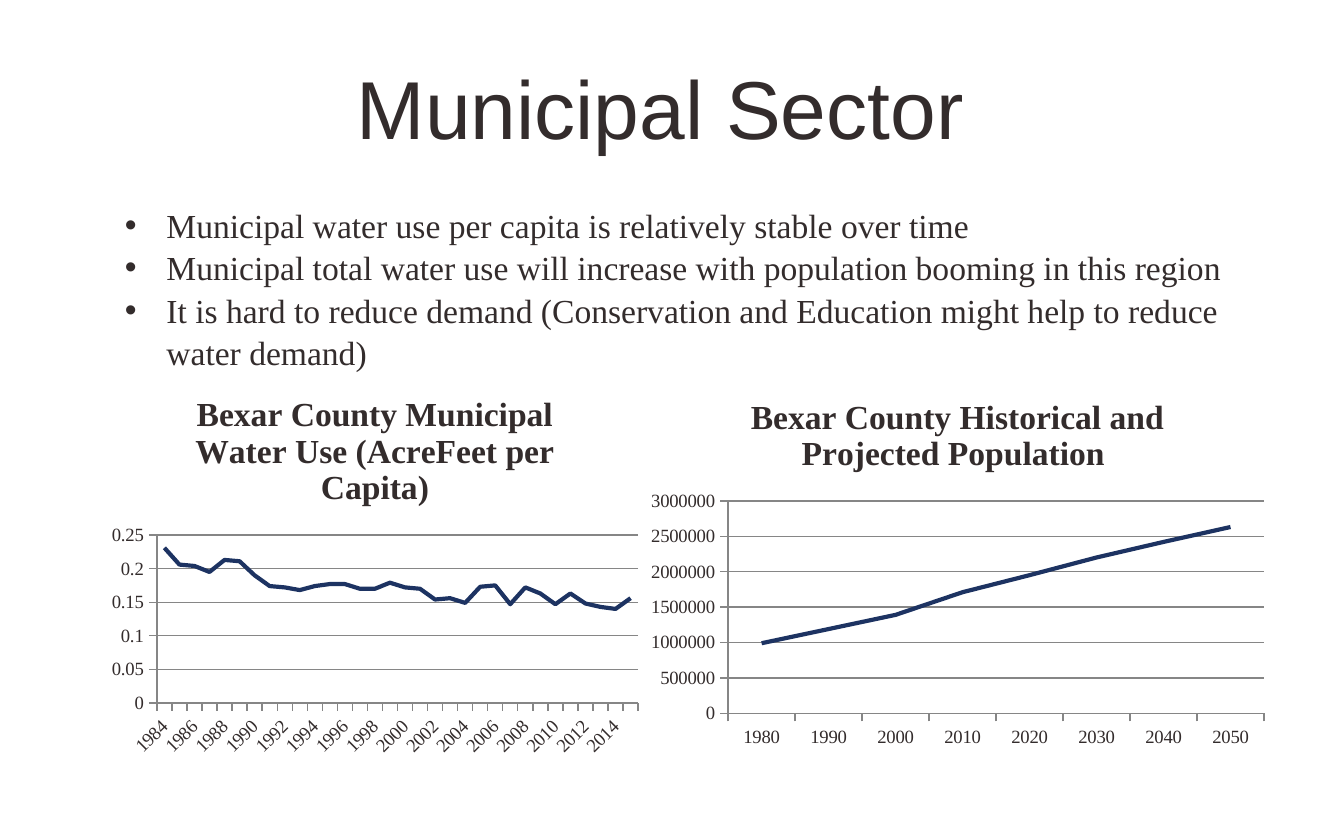
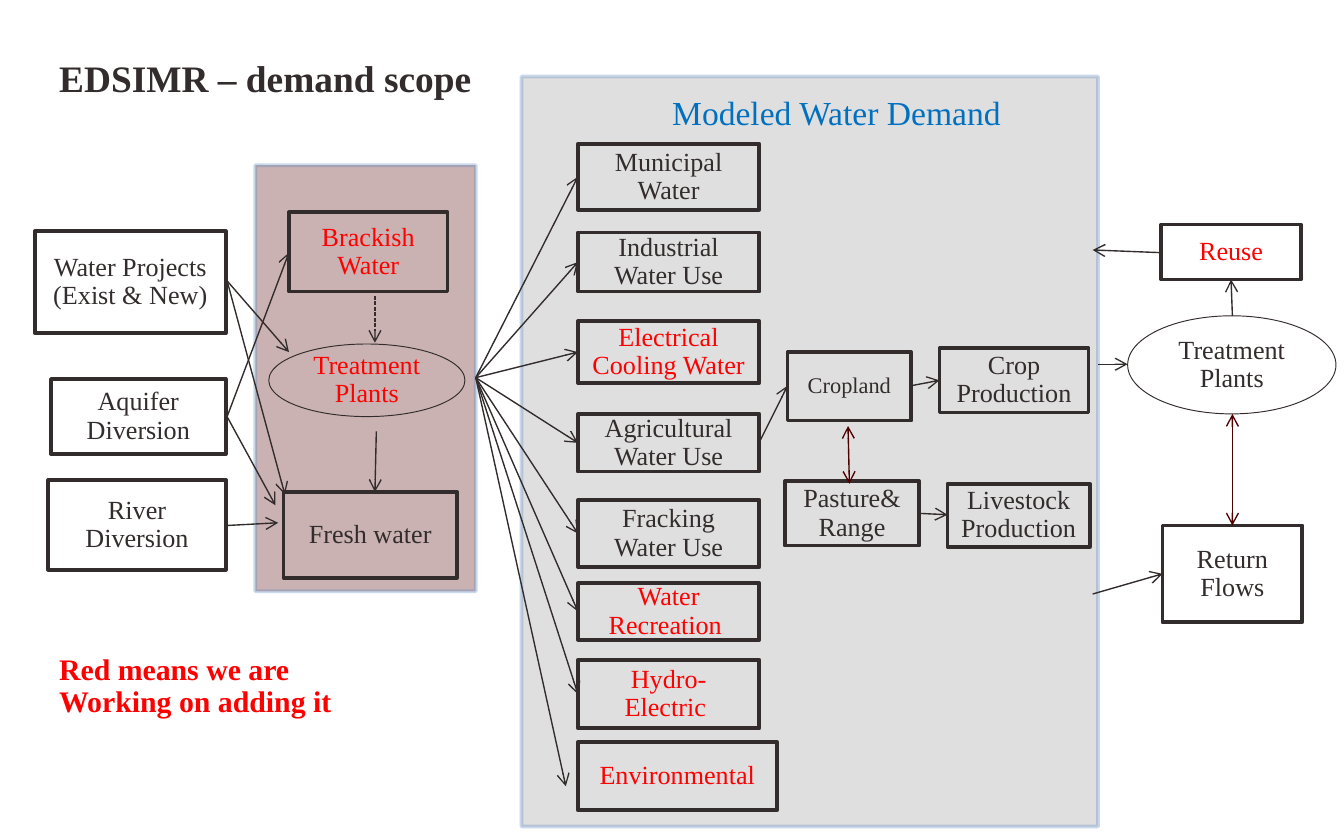
from lxml.etree import SubElement
from pptx import Presentation
from pptx.chart.data import CategoryChartData
from pptx.dml.color import RGBColor
from pptx.enum.chart import XL_CHART_TYPE, XL_TICK_MARK
from pptx.enum.dml import MSO_LINE
from pptx.enum.shapes import MSO_CONNECTOR, MSO_SHAPE
from pptx.enum.text import MSO_ANCHOR, PP_ALIGN
from pptx.oxml.ns import qn
from pptx.util import Inches, Pt

COLORS = {
    "text": "332C2C",
    "planned": "FF0000",
    "heading": "0070C0",
    "series": "1D3362",
    "axis": "868686",
    "demand": "9B9696",
    "supply": "500000",
    "band_line": "4F81BD",
    "exchange": "4E0000",
}
SANS, SERIF = "Arial", "Times New Roman"

WATER_USE = [0.231, 0.206, 0.204, 0.195, 0.213, 0.211, 0.19, 0.174,
             0.172, 0.168, 0.174, 0.177, 0.177, 0.17, 0.17, 0.179,
             0.172, 0.17, 0.154, 0.156, 0.149, 0.173, 0.175, 0.147,
             0.172, 0.163, 0.147, 0.163, 0.148, 0.143, 0.14, 0.156]
POPULATION = [990000, 1190000, 1390000, 1710000,
              1950000, 2200000, 2420000, 2630000]

# Demand boxes share a left edge: text, top, height, colour
DEMAND_LEFT, DEMAND_WIDTH = 4.3, 1.35
DEMANDS = [
    ("Municipal Water", 1.07, 0.49, "text"),
    ("Industrial Water Use", 1.73, 0.44, "text"),
    ("Electrical Cooling Water", 2.39, 0.46, "planned"),
    ("Agricultural Water Use", 3.08, 0.43, "text"),
    ("Fracking Water Use", 3.72, 0.5, "text"),
    ("Water Recreation ", 4.34, 0.42, "planned"),
    ("Hydro-Electric ", 4.91, 0.51, "planned"),
]
BOXES = [
    ("Environmental", (DEMAND_LEFT, 5.52, 1.48, 0.51), "planned"),
    ("Pasture&\nRange", (5.84, 3.58, 1, 0.48), "text"),
    ("Crop Production", (6.99, 2.59, 1.11, 0.48), "text"),
    ("Livestock Production", (7.05, 3.6, 1.06, 0.47), "text"),
    ("Fresh water", (2.11, 3.66, 1.29, 0.64), "text"),
    ("Brackish Water", (2.15, 1.58, 1.18, 0.59), "planned"),
    ("Aquifer Diversion", (0.38, 2.82, 1.3, 0.56), "text"),
    ("River Diversion", (0.36, 3.57, 1.32, 0.67), "text"),
    ("Water Projects (Exist & New)", (0.26, 1.72, 1.42, 0.76), "text"),
    ("Reuse", (8.64, 1.67, 1.04, 0.41), "planned"),
    ("Return Flows", (8.65, 3.91, 1.04, 0.72), "text"),
]
PLANTS = [
    ((2, 2.56, 1.46, 0.54), "planned"),
    ((8.39, 2.35, 1.55, 0.73), "text"),
]
SUPPLY_OUT = (3.54, 2.81)
PROJECTS_OUT, AQUIFER_OUT = (1.69, 2.09), (1.69, 3.1)
FLOWS = [
    (PROJECTS_OUT, (2.15, 2.62)),
    (PROJECTS_OUT, (2.12, 3.68)),
    (AQUIFER_OUT, (2.15, 1.88)),
    (AQUIFER_OUT, (2.05, 3.76)),
    ((1.69, 3.91), (2.07, 3.89)),
    ((2.8, 3.21), (2.79, 3.66)),
    (SUPPLY_OUT, (4.21, 5.85)),
    ((5.65, 3.29), (5.86, 2.87)),
    ((6.78, 2.87), (6.99, 2.83)),
    ((6.84, 3.82), (7.05, 3.83)),
    ((8.17, 2.71), (8.39, 2.71)),
    ((8.64, 1.88), (8.13, 1.86)),
    ((8.13, 4.42), (8.65, 4.27)),
    ((9.17, 2.35), (9.16, 2.08)),
]
EXCHANGES = [((6.31, 3.17), (6.32, 3.6)), ((9.17, 3.08), (9.17, 3.91))]


def rgb(name):
    return RGBColor.from_string(COLORS[name])


def inches(values):
    return [Inches(v) for v in values]


def set_font(font, size, color="text", name=SERIF, bold=False):
    font.size, font.name, font.bold = Pt(size), name, bold
    font.color.rgb = rgb(color)


def set_line(line, color, width):
    line.color.rgb = rgb(color)
    line.width = Pt(width)


def set_alpha(color_parent, percent):
    """Make the solid fill inside a fill or line element translucent."""
    clr = color_parent.find(qn("a:solidFill"))[0]
    SubElement(clr, qn("a:alpha"), val=str(percent * 1000))


def add_bullet(p):
    pPr = p._p.get_or_add_pPr()
    indent = Inches(0.31)
    pPr.set("marL", str(indent))
    pPr.set("indent", str(-indent))
    SubElement(pPr, qn("a:buFont"), typeface=SANS)
    SubElement(pPr, qn("a:buChar"), char="•")


def fill_text(tf, text, size, color="text", name=SERIF, bold=False,
              align=PP_ALIGN.LEFT, spacing=1.0, bullets=False):
    """Write one paragraph for each line of text."""
    for i, line in enumerate(text.split("\n")):
        p = tf.paragraphs[0] if i == 0 else tf.add_paragraph()
        p.alignment, p.line_spacing = align, spacing
        if bullets:
            add_bullet(p)
        r = p.add_run()
        r.text = line
        set_font(r.font, size, color, name, bold)


def add_text(s, box, text, size, anchor=MSO_ANCHOR.TOP, wrap=True,
             margins=(0.1, 0.05), **style):
    tf = s.shapes.add_textbox(*inches(box)).text_frame
    tf.word_wrap, tf.vertical_anchor = wrap, anchor
    tf.margin_left = tf.margin_right = Inches(margins[0])
    tf.margin_top = tf.margin_bottom = Inches(margins[1])
    fill_text(tf, text, size, **style)


def add_node(s, box, text, color="text", size=14,
             kind=MSO_SHAPE.RECTANGLE, width=2):
    sp = s.shapes.add_shape(kind, *inches(box))
    sp.shadow.inherit = False
    sp.fill.background()
    set_line(sp.line, "text", width)
    tf = sp.text_frame
    tf.word_wrap, tf.vertical_anchor = True, MSO_ANCHOR.MIDDLE
    fill_text(tf, text, size, color, align=PP_ALIGN.CENTER, spacing=0.9)


def add_band(s, box, color):
    sp = s.shapes.add_shape(MSO_SHAPE.RECTANGLE, *inches(box))
    sp.shadow.inherit = False
    sp.fill.solid()
    sp.fill.fore_color.rgb = rgb(color)
    set_line(sp.line, "band_line", 2)
    spPr = sp._element.spPr
    set_alpha(spPr, 30)
    set_alpha(spPr.find(qn("a:ln")), 30)


def add_arrow(s, start, end, color="text", both=False, dashed=False):
    cx = s.shapes.add_connector(MSO_CONNECTOR.STRAIGHT, *inches(start + end))
    set_line(cx.line, color, 0.75)
    if dashed:
        cx.line.dash_style = MSO_LINE.SQUARE_DOT
    spPr = cx._element.spPr
    ln = spPr.find(qn("a:ln"))
    for tag in ["a:headEnd", "a:tailEnd"] if both else ["a:tailEnd"]:
        SubElement(ln, qn(tag), type="arrow")
    SubElement(spPr, qn("a:effectLst"))


def add_line_chart(s, box, title, years, values, slanted=False):
    data = CategoryChartData()
    data.categories = [str(y) for y in years]
    data.add_series("Series 1", values)
    chart = s.shapes.add_chart(XL_CHART_TYPE.LINE, *inches(box), data).chart
    set_font(chart.font, 10)
    chart.has_legend = False
    chart.has_title = True
    fill_text(chart.chart_title.text_frame, title, 18, bold=True,
              align=PP_ALIGN.CENTER)
    chart.plots[0].vary_by_categories = False
    series = chart.plots[0].series[0]
    series.smooth = False
    set_line(series.format.line, "series", 2.25)
    for axis in (chart.category_axis, chart.value_axis):
        axis.major_tick_mark = XL_TICK_MARK.OUTSIDE
        set_line(axis.format.line, "axis", 0.75)
        set_font(axis.tick_labels.font, 10)
    chart.value_axis.has_major_gridlines = True
    set_line(chart.value_axis.major_gridlines.format.line, "axis", 0.75)
    if slanted:
        labels = chart.category_axis._element.find(qn("c:txPr"))
        labels.find(qn("a:bodyPr")).set("rot", str(-45 * 60000))


def municipal_slide(s):
    add_text(s, (0.5, 0.3, 9, 0.99), "Municipal Sector ", 44, name=SANS,
             anchor=MSO_ANCHOR.MIDDLE, align=PP_ALIGN.CENTER)
    add_line_chart(s, (0.75, 2.77, 4.08, 2.92),
                   "Bexar County Municipal Water Use (AcreFeet per Capita)",
                   range(1984, 2016), WATER_USE, slanted=True)
    add_text(s, (0.83, 1.46, 8.92, 1.31),
             "Municipal water use per capita is relatively stable over time\n"
             "Municipal total water use will increase with population "
             "booming in this region\n"
             "It is hard to reduce demand (Conservation and Education might "
             "help to reduce water demand)",
             18, spacing=1.05, bullets=True)
    add_line_chart(s, (4.75, 2.79, 4.75, 2.83),
                   "Bexar County Historical and Projected Population ",
                   range(1980, 2051, 10), POPULATION)


def demand_slide(s):
    add_band(s, (3.88, 0.57, 4.29, 5.58), "demand")
    add_band(s, (1.9, 1.23, 1.64, 3.17), "supply")
    for text, top, height, color in DEMANDS:
        add_node(s, (DEMAND_LEFT, top, DEMAND_WIDTH, height), text, color)
        add_arrow(s, SUPPLY_OUT, (DEMAND_LEFT, top + height / 2))
    add_node(s, (5.86, 2.62, 0.92, 0.51), "Cropland", size=12)
    for text, box, color in BOXES:
        add_node(s, box, text, color)
    for box, color in PLANTS:
        add_node(s, box, "Treatment Plants", color,
                 kind=MSO_SHAPE.OVAL, width=0.5)
    for start, end in FLOWS:
        add_arrow(s, start, end)
    add_arrow(s, (2.79, 2.2), (2.79, 2.55), dashed=True)
    for start, end in EXCHANGES:
        add_arrow(s, start, end, "exchange", both=True)
    add_text(s, (4.59, 0.63, 3.27, 0.41), "Modeled Water Demand", 18,
             anchor=MSO_ANCHOR.MIDDLE, color="heading",
             align=PP_ALIGN.CENTER)
    add_text(s, (0.36, 0.37, 3.25, 0.42), "EDSIMR – demand scope", 20,
             wrap=False, margins=(0.08, 0.04), bold=True)
    add_text(s, (0.36, 4.83, 2.21, 0.56),
             "Red means we are\nWorking on adding it", 16, wrap=False,
             margins=(0.08, 0.04), color="planned", bold=True, spacing=0.9)


def main():
    prs = Presentation()
    prs.slide_width, prs.slide_height = Inches(10), Inches(6.25)
    for build in (municipal_slide, demand_slide):
        build(prs.slides.add_slide(prs.slide_layouts[6]))
    prs.save("out.pptx")


if __name__ == "__main__":
    main()
